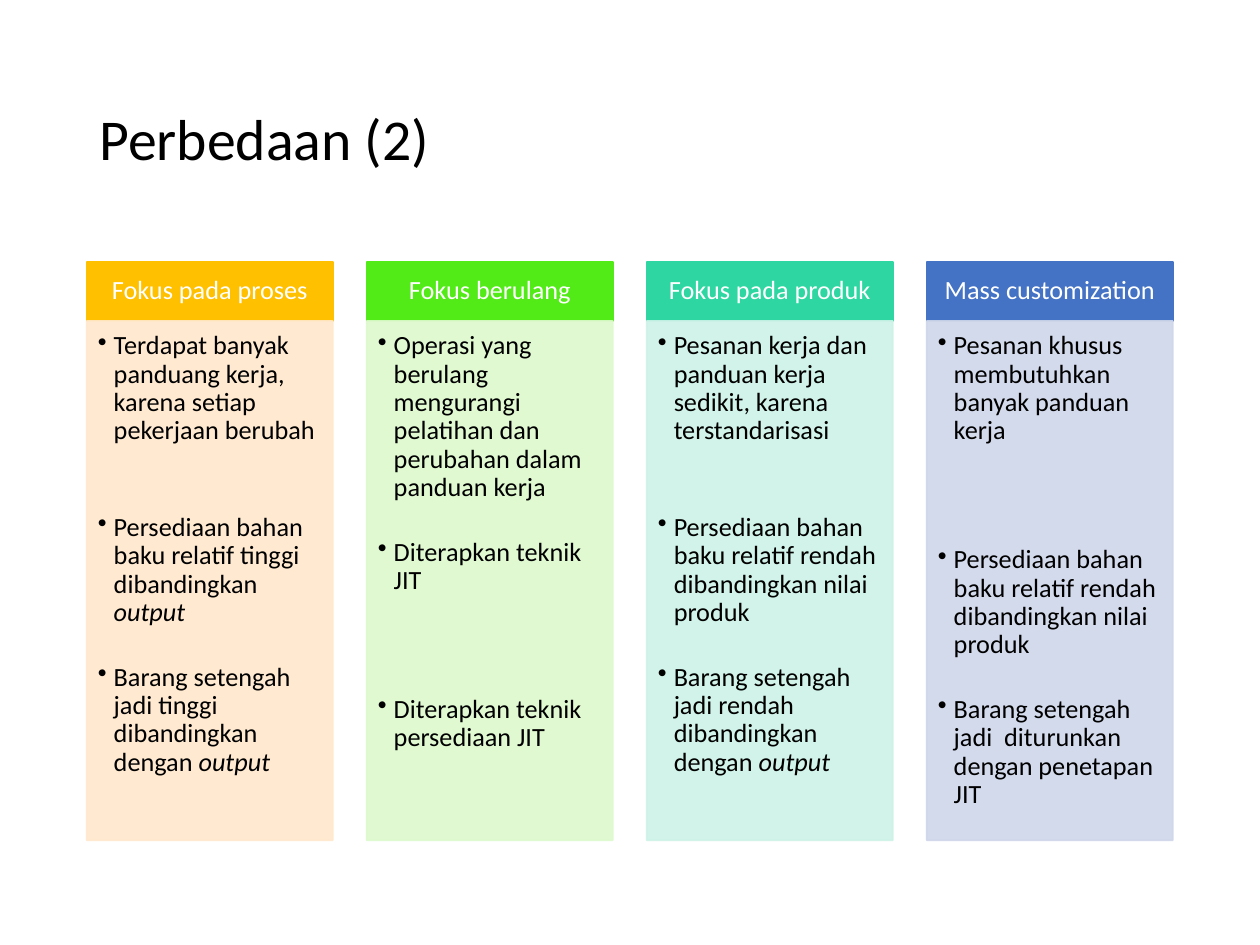
from dataclasses import dataclass
from typing import NamedTuple

from lxml.etree import SubElement
from pptx import Presentation
from pptx.dml.color import RGBColor as Color
from pptx.enum.shapes import MSO_AUTO_SHAPE_TYPE as ShapeType
from pptx.enum.text import MSO_ANCHOR as Anchor
from pptx.enum.text import MSO_AUTO_SIZE as AutoSize
from pptx.enum.text import PP_ALIGN as Align
from pptx.oxml.ns import qn
from pptx.util import Pt


@dataclass(frozen=True)
class Theme:
    """Holds the colours, type sizes and paragraph rhythm."""
    font: str = "Calibri"
    title_size: float = 33
    text_size: float = 15
    ink: str = "000000"
    paper: str = "FFFFFF"
    heads: tuple = ("FFC000", "53EB17", "2ED7A1", "4472C4")
    panels: tuple = ("FFE8CC", "DDF9CC", "CDF2E7", "CFD6EA")
    panel_alpha: int = 90
    line_spacing: float = 0.9
    item_gap: float = 2.25
    row_gap: float = 18.4
    indent: float = 9


class Box(NamedTuple):
    """Gives a place and size in points."""
    left: float
    top: float
    width: float
    height: float


class Item(NamedTuple):
    """Gives a bullet, its closing italic word and the rows skipped above."""
    text: str
    italic: str = ""
    skip: int = 0


THEME = Theme()
TITLE_BOX = Box(49.6, 28.8, 620.6, 104.4)
COLUMNS_BOX = Box(49.6, 149.6, 620.6, 330.6)
COLUMN_GAP = 19.4
HEAD_HEIGHT = 33.8
COLUMNS = [
    ("Fokus pada proses", [
        Item("Terdapat banyak panduang kerja, karena setiap pekerjaan berubah"),
        Item("Persediaan bahan baku relatif tinggi dibandingkan ", "output", 2),
        Item("Barang setengah jadi tinggi dibandingkan dengan ", "output", 1),
    ]),
    ("Fokus berulang", [
        Item("Operasi yang berulang mengurangi pelatihan dan perubahan dalam panduan kerja"),
        Item("Diterapkan teknik JIT", skip=1),
        Item("Diterapkan teknik persediaan JIT", skip=3),
    ]),
    ("Fokus pada produk", [
        Item("Pesanan kerja dan panduan kerja sedikit, karena terstandarisasi"),
        Item("Persediaan bahan baku relatif rendah dibandingkan nilai produk", skip=2),
        Item("Barang setengah jadi rendah dibandingkan dengan ", "output", 1),
    ]),
    ("Mass customization", [
        Item("Pesanan khusus membutuhkan banyak panduan kerja"),
        Item("Persediaan bahan baku relatif rendah dibandingkan nilai produk", skip=3),
        Item("Barang setengah jadi  diturunkan dengan penetapan JIT", skip=1),
    ]),
]


def add_text(para, text, *, size=THEME.text_size, color=THEME.ink, italic=False,
             align=Align.LEFT, before=0):
    """Adds a formatted span to a paragraph."""
    para.alignment = align
    para.line_spacing = THEME.line_spacing
    para.space_before = Pt(before)
    para.space_after = Pt(0)
    span = para.add_run()
    span.text = text
    span.font.name = THEME.font
    span.font.size = Pt(size)
    span.font.italic = italic
    span.font.color.rgb = Color.from_string(color)


def set_bullet(para):
    """Gives a paragraph a hanging bullet."""
    props = para._p.get_or_add_pPr()
    props.set("marL", str(Pt(THEME.indent)))
    props.set("indent", str(-Pt(THEME.indent)))
    SubElement(props, qn("a:buChar")).set("char", "•")


def set_frame(frame, anchor, insets):
    """Sets wrapping, anchor and insets of a text frame."""
    frame.word_wrap = True
    frame.auto_size = AutoSize.NONE
    frame.vertical_anchor = anchor
    (frame.margin_left, frame.margin_top,
     frame.margin_right, frame.margin_bottom) = map(Pt, insets)


def add_block(page, box, color, alpha=100):
    """Adds a rectangle with matching fill and line."""
    block = page.shapes.add_shape(ShapeType.RECTANGLE, *map(Pt, box))
    block.shadow.inherit = False
    block.fill.solid()
    block.fill.fore_color.rgb = Color.from_string(color)
    block.line.color.rgb = Color.from_string(color)
    block.line.width = Pt(1)
    if alpha < 100:
        for tint in block.element.spPr.iter(qn("a:srgbClr")):
            SubElement(tint, qn("a:alpha")).set("val", str(alpha * 1000))
    return block


def add_title(page, box, text):
    """Places the title in its placeholder."""
    title = page.shapes.title
    title.left, title.top, title.width, title.height = map(Pt, box)
    set_frame(title.text_frame, Anchor.MIDDLE, (7.2, 3.6, 7.2, 3.6))
    add_text(title.text_frame.paragraphs[0], text, size=THEME.title_size)


def add_head(page, box, text, color):
    """Places a coloured column heading."""
    frame = add_block(page, box, color).text_frame
    set_frame(frame, Anchor.MIDDLE, (8.4, 4.8, 8.4, 4.8))
    add_text(frame.paragraphs[0], text, color=THEME.paper, align=Align.CENTER)


def add_panel(page, box, items, color):
    """Places a tinted panel with a bulleted list."""
    frame = add_block(page, box, color, THEME.panel_alpha).text_frame
    set_frame(frame, Anchor.TOP, (6.4, 6.4, 8.5, 9.6))
    for index, item in enumerate(items):
        para = frame.add_paragraph() if index else frame.paragraphs[0]
        before = THEME.item_gap + item.skip * THEME.row_gap if index else 0
        add_text(para, item.text, before=before)
        if item.italic:
            add_text(para, item.italic, italic=True, before=before)
        set_bullet(para)


def add_columns(page, box, columns):
    """Spreads headed lists evenly over a box."""
    width = (box.width - COLUMN_GAP * (len(columns) - 1)) / len(columns)
    for index, (heading, items) in enumerate(columns):
        left = box.left + index * (width + COLUMN_GAP)
        head = Box(left, box.top, width, HEAD_HEIGHT)
        panel = Box(left, box.top + HEAD_HEIGHT, width, box.height - HEAD_HEIGHT)
        add_head(page, head, heading, THEME.heads[index])
        add_panel(page, panel, items, THEME.panels[index])


def main():
    """Builds and saves the deck."""
    deck = Presentation()
    deck.slide_width, deck.slide_height = Pt(720), Pt(540)
    page = deck.slides.add_slide(deck.slide_layouts.get_by_name("Title Only"))
    add_title(page, TITLE_BOX, "Perbedaan (2)")
    add_columns(page, COLUMNS_BOX, COLUMNS)
    deck.save("out.pptx")


if __name__ == "__main__":
    main()
